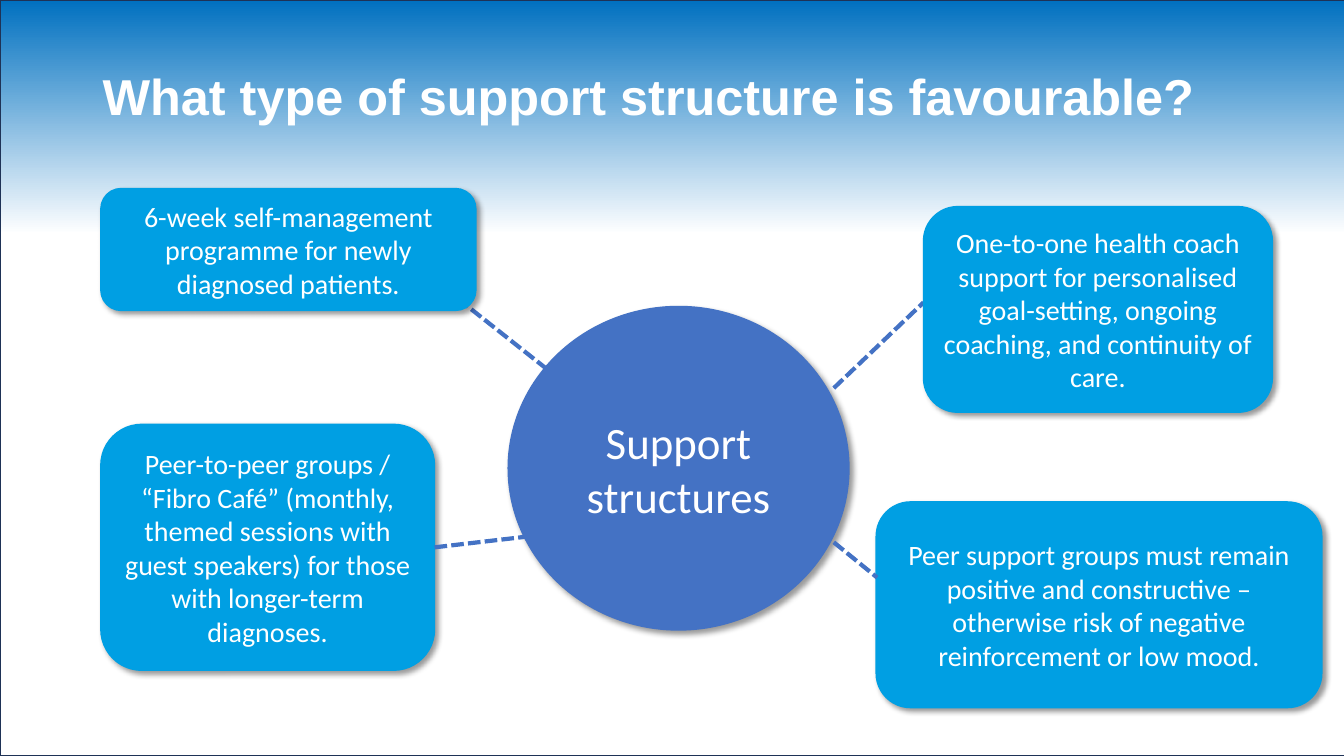
"""Build the slide on favourable support structures for patients."""
from dataclasses import dataclass
from typing import Optional

from lxml import etree
from pptx import Presentation
from pptx.dml.color import RGBColor
from pptx.enum.dml import MSO_LINE
from pptx.enum.shapes import MSO_CONNECTOR, MSO_SHAPE
from pptx.enum.text import MSO_ANCHOR, PP_ALIGN
from pptx.oxml import parse_xml
from pptx.oxml.ns import nsdecls, qn
from pptx.shapes.autoshape import Shape
from pptx.slide import Slide
from pptx.util import Inches, Pt

RECTANGLE = MSO_SHAPE.RECTANGLE
ROUNDED = MSO_SHAPE.ROUNDED_RECTANGLE
OVAL = MSO_SHAPE.OVAL
STRAIGHT = MSO_CONNECTOR.STRAIGHT
SHORT_DASH = MSO_LINE.SQUARE_DOT
MIDDLE = MSO_ANCHOR.MIDDLE
CENTER = PP_ALIGN.CENTER
RIGHT_SIDE = 3

WHITE = RGBColor(0xFF, 0xFF, 0xFF)
SKY_BLUE = RGBColor(0x00, 0x70, 0xC0)
NAVY = RGBColor(0x1E, 0x32, 0x56)
HUB_BLUE = RGBColor(0x44, 0x72, 0xC4)
BUBBLE_BLUE = RGBColor(0x00, 0x9F, 0xE3)

SHADOW_XML = (
    f'<a:outerShdw {nsdecls("a")} blurRad="50800" dist="38100" dir="2700000" '
    'algn="tl" rotWithShape="0"><a:srgbClr val="000000">'
    '<a:alpha val="40000"/></a:srgbClr></a:outerShdw>'
)


@dataclass(frozen=True)
class Bubble:
    text: str
    left: float
    top: float
    width: float
    height: float
    outline: MSO_SHAPE = ROUNDED
    color: RGBColor = BUBBLE_BLUE
    size: int = 20


@dataclass(frozen=True)
class Spoke:
    start: tuple[float, float]
    end: tuple[float, float]
    source: Optional[Bubble] = None


HUB = Bubble("Support structures", 5.04, 3.04, 3.38, 3.21, OVAL, HUB_BLUE, 32)
PEER_GROUPS = Bubble(
    "Peer-to-peer groups / “Fibro Café” (monthly, themed sessions with guest "
    "speakers) for those with longer-term diagnoses.", 1, 4.21, 3.31, 2.44)
POSITIVE_TONE = Bubble(
    "Peer support groups must remain positive and constructive – otherwise "
    "risk of negative reinforcement or low mood.", 8.69, 4.98, 4.42, 2.04)
PROGRAMME = Bubble(
    "6-week self-management programme for newly diagnosed patients.",
    1, 1.87, 3.72, 1.21)
HEALTH_COACH = Bubble(
    "One-to-one health coach support for personalised goal-setting, ongoing "
    "coaching, and continuity of care.", 9.16, 2.05, 3.46, 2.04)

SPOKES = (
    Spoke((4.31, 5.43), (5.86, 5.25), PEER_GROUPS),
    Spoke((8.27, 3.85), (9.16, 3)),
    Spoke((8.27, 5.38), (8.7, 5.73)),
    Spoke((4.02, 2.55), (5.46, 3.69)),
)


def write_text(shape: Shape, text: str, size: int, font: str, bold: bool = False) -> None:
    """Put one white run in the shape, vertically centred."""
    frame = shape.text_frame
    frame.word_wrap = True
    frame.vertical_anchor = MIDDLE
    run = frame.paragraphs[0].add_run()
    run.text = text
    run.font.size = Pt(size)
    run.font.name = font
    run.font.bold = bold
    run.font.color.rgb = WHITE


def draw_backdrop(slide: Slide) -> None:
    """Draw the blue-to-white gradient behind everything."""
    backdrop = slide.shapes.add_shape(RECTANGLE, 0, 0, Inches(13.69), Inches(7.5))
    backdrop.shadow.inherit = False
    backdrop.fill.gradient()
    backdrop.fill.gradient_angle = 270
    stops = ((0, SKY_BLUE), (0.31, WHITE))
    for stop, (position, color) in zip(backdrop.fill.gradient_stops, stops):
        stop.position = position
        stop.color.rgb = color
    backdrop.line.color.rgb = NAVY
    backdrop.line.width = Pt(1)


def draw_heading(slide: Slide) -> None:
    """Write the slide heading."""
    heading = slide.shapes.add_textbox(
        Inches(0.92), Inches(0.26), Inches(11.5), Inches(1.45))
    write_text(heading, "What type of support structure is favourable?", 36, "Arial", True)
    heading.text_frame.paragraphs[0].line_spacing = 0.9


def draw_bubble(slide: Slide, bubble: Bubble) -> Shape:
    """Draw a filled, shadowed shape with centred text."""
    shape = slide.shapes.add_shape(
        bubble.outline, Inches(bubble.left), Inches(bubble.top),
        Inches(bubble.width), Inches(bubble.height))
    shape.fill.solid()
    shape.fill.fore_color.rgb = bubble.color
    shape.line.color.rgb = bubble.color
    shape.line.width = Pt(1)
    shape.shadow.inherit = False
    shape.element.spPr.find(qn("a:effectLst")).append(parse_xml(SHADOW_XML))
    write_text(shape, bubble.text, bubble.size, "Calibri")
    shape.text_frame.paragraphs[0].alignment = CENTER
    return shape


def draw_spoke(slide: Slide, spoke: Spoke, drawn: dict[Bubble, Shape]) -> None:
    """Draw a dashed line between the hub and a bubble."""
    line = slide.shapes.add_connector(
        STRAIGHT, *(Inches(value) for value in spoke.start + spoke.end))
    if spoke.source:
        line.begin_connect(drawn[spoke.source], RIGHT_SIDE)
    line.line.color.rgb = HUB_BLUE
    line.line.width = Pt(3)
    line.line.dash_style = SHORT_DASH
    etree.SubElement(line.element.spPr, qn("a:effectLst"))


def main() -> None:
    """Assemble and save the slide."""
    deck = Presentation()
    deck.slide_width = Inches(13.33)
    deck.slide_height = Inches(7.5)
    slide = deck.slides.add_slide(deck.slide_layouts[6])
    draw_backdrop(slide)
    draw_heading(slide)
    drawn = {bubble: draw_bubble(slide, bubble)
             for bubble in (HUB, PEER_GROUPS, POSITIVE_TONE)}
    for spoke in SPOKES:
        draw_spoke(slide, spoke, drawn)
    for bubble in (PROGRAMME, HEALTH_COACH):
        draw_bubble(slide, bubble)
    deck.save("out.pptx")


if __name__ == "__main__":
    main()
